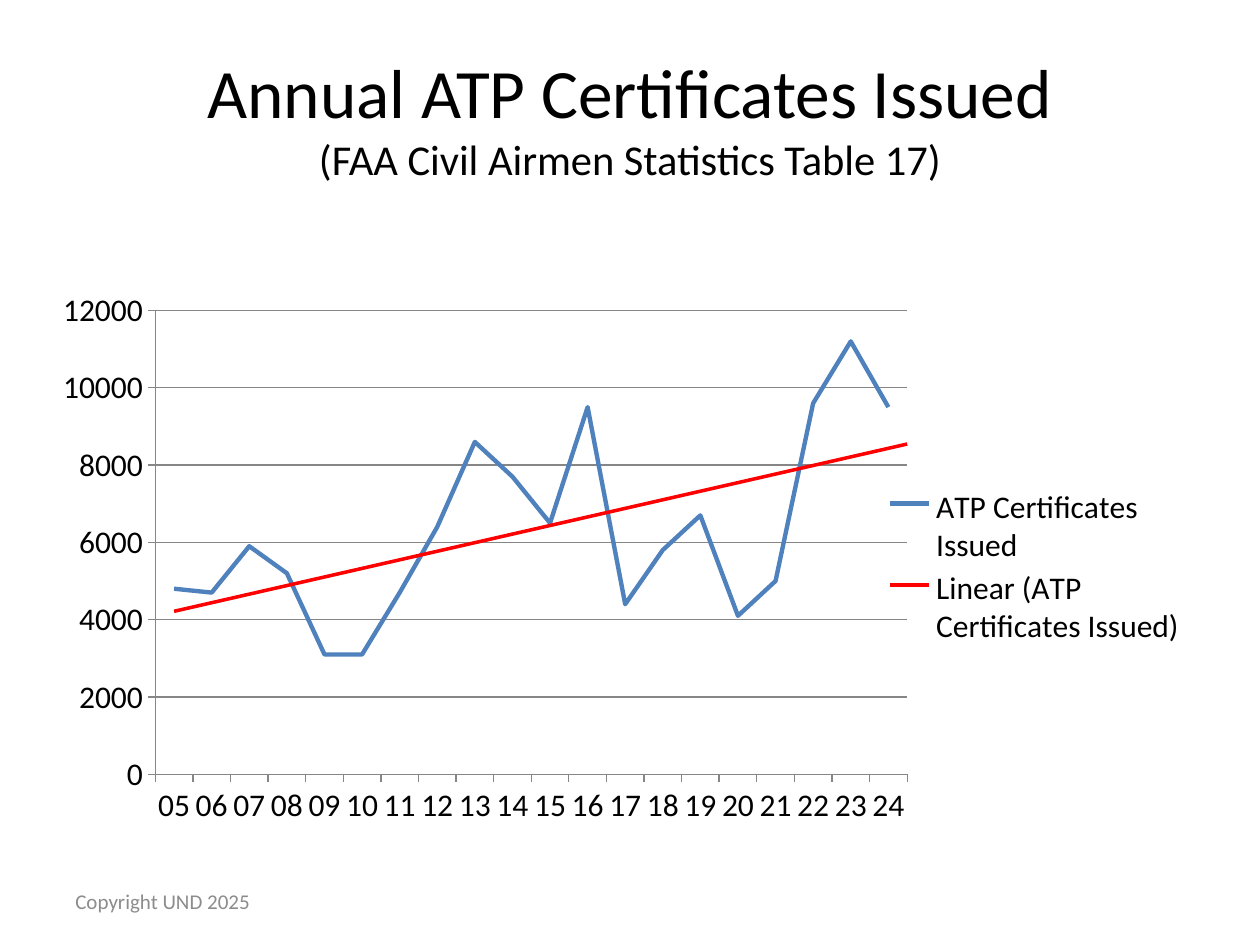
from lxml import etree
from pptx import Presentation
from pptx.chart.data import CategoryChartData
from pptx.dml.color import RGBColor
from pptx.enum.chart import XL_CHART_TYPE as ChartType
from pptx.enum.chart import XL_LEGEND_POSITION as LegendPosition
from pptx.enum.chart import XL_TICK_MARK as TickMark
from pptx.enum.text import MSO_ANCHOR as Anchor
from pptx.enum.text import PP_ALIGN as Align
from pptx.oxml import parse_xml
from pptx.oxml.ns import nsdecls, qn
from pptx.util import Cm, Pt

BLACK = RGBColor(0x00, 0x00, 0x00)
GREY = RGBColor(0x8C, 0x8C, 0x8C)
AXIS_GREY = RGBColor(0x86, 0x86, 0x86)
BLUE = RGBColor(0x4F, 0x81, 0xBD)
RED = RGBColor(0xFF, 0x00, 0x00)

YEARS = [f"{year:02d}" for year in range(5, 25)]
CERTIFICATES = [4800, 4700, 5900, 5200, 3100, 3100, 4700, 6400, 8600, 7700,
                6500, 9500, 4400, 5800, 6700, 4100, 5000, 9600, 11200, 9500]


def set_layout(part, index, box, inner=False):
    """Fix a chart part at x, y, width, height, as fractions of the chart."""
    for previous in part.findall(qn("c:layout")):
        part.remove(previous)
    layout = etree.Element(qn("c:layout"))
    manual = etree.SubElement(layout, qn("c:manualLayout"))
    settings = [("layoutTarget", "inner")] if inner else []
    settings += [("xMode", "edge"), ("yMode", "edge"), *zip("xywh", box)]
    for tag, value in settings:
        etree.SubElement(manual, qn(f"c:{tag}")).set("val", str(value))
    part.insert(index, layout)


def add_linear_trend(series, color, width, forward):
    trend = parse_xml(
        f'<c:trendline {nsdecls("c", "a")}>'
        f'<c:spPr><a:ln w="{Pt(width)}"><a:solidFill><a:srgbClr val="{color}"/>'
        '</a:solidFill></a:ln></c:spPr><c:trendlineType val="linear"/>'
        f'<c:forward val="{forward}"/><c:dispRSqr val="0"/><c:dispEq val="0"/>'
        '</c:trendline>')
    series._element.find(qn("c:cat")).addprevious(trend)


class SlideBuilder:
    font_name = "Calibri"

    def __init__(self, slide):
        self.slide = slide

    def style(self, font, size, color):
        font.name = self.font_name
        font.size = Pt(size)
        font.color.rgb = color

    def text(self, box, lines, color, align=Align.LEFT):
        """Add one paragraph whose lines are (wording, size) pairs."""
        frame = self.slide.shapes.add_textbox(*map(Cm, box)).text_frame
        frame.word_wrap = True
        frame.vertical_anchor = Anchor.MIDDLE
        paragraph = frame.paragraphs[0]
        paragraph.alignment = align
        for number, (wording, size) in enumerate(lines):
            if number:
                paragraph.add_line_break()
            run = paragraph.add_run()
            run.text = wording
            self.style(run.font, size, color)

    def line_chart(self, box, name, categories, values):
        data = CategoryChartData(number_format="General")
        data.categories = categories
        data.add_series(name, values)
        chart = self.slide.shapes.add_chart(
            ChartType.LINE, *map(Cm, box), data).chart
        self.style(chart.font, 18, BLACK)
        chart.has_title = False
        chart.has_legend = True
        chart.legend.position = LegendPosition.RIGHT
        chart.legend.include_in_layout = False

        plot = chart.plots[0]
        plot.vary_by_categories = False
        series = plot.series[0]
        series.smooth = False
        series.format.line.color.rgb = BLUE
        series.format.line.width = Pt(2.5)
        add_linear_trend(series, RED, 2, 0.5)

        value_axis = chart.value_axis
        value_axis.minimum_scale = 0
        value_axis.maximum_scale = 12000
        value_axis.major_unit = 2000
        value_axis.has_major_gridlines = True
        for axis in (chart.category_axis, value_axis):
            axis.major_tick_mark = TickMark.OUTSIDE
            axis.minor_tick_mark = TickMark.NONE
        for ruled in (chart.category_axis, value_axis, value_axis.major_gridlines):
            ruled.format.line.color.rgb = AXIS_GREY
            ruled.format.line.width = Pt(0.75)

        plot_area = chart._chartSpace.chart.plotArea
        set_layout(plot_area, 0, (0.106, 0.144, 0.645, 0.744), inner=True)
        set_layout(chart.legend._element, 1, (0.73, 0.42, 0.26, 0.27))


def main():
    presentation = Presentation()
    presentation.slide_width = Cm(25.4)
    presentation.slide_height = Cm(19.05)
    builder = SlideBuilder(
        presentation.slides.add_slide(presentation.slide_layouts[6]))

    builder.text((1.27, 0.76, 22.86, 3.18),
                 [("Annual ATP Certificates Issued", 39.6),
                  ("(FAA Civil Airmen Statistics Table 17)", 24.3)],
                 BLACK, Align.CENTER)
    builder.text((1.27, 17.65, 5.92, 1.02), [("Copyright UND 2025", 12)], GREY)
    builder.line_chart((0.64, 4.45, 23.5, 12.57),
                       "ATP Certificates Issued", YEARS, CERTIFICATES)
    presentation.save("out.pptx")


if __name__ == "__main__":
    main()
